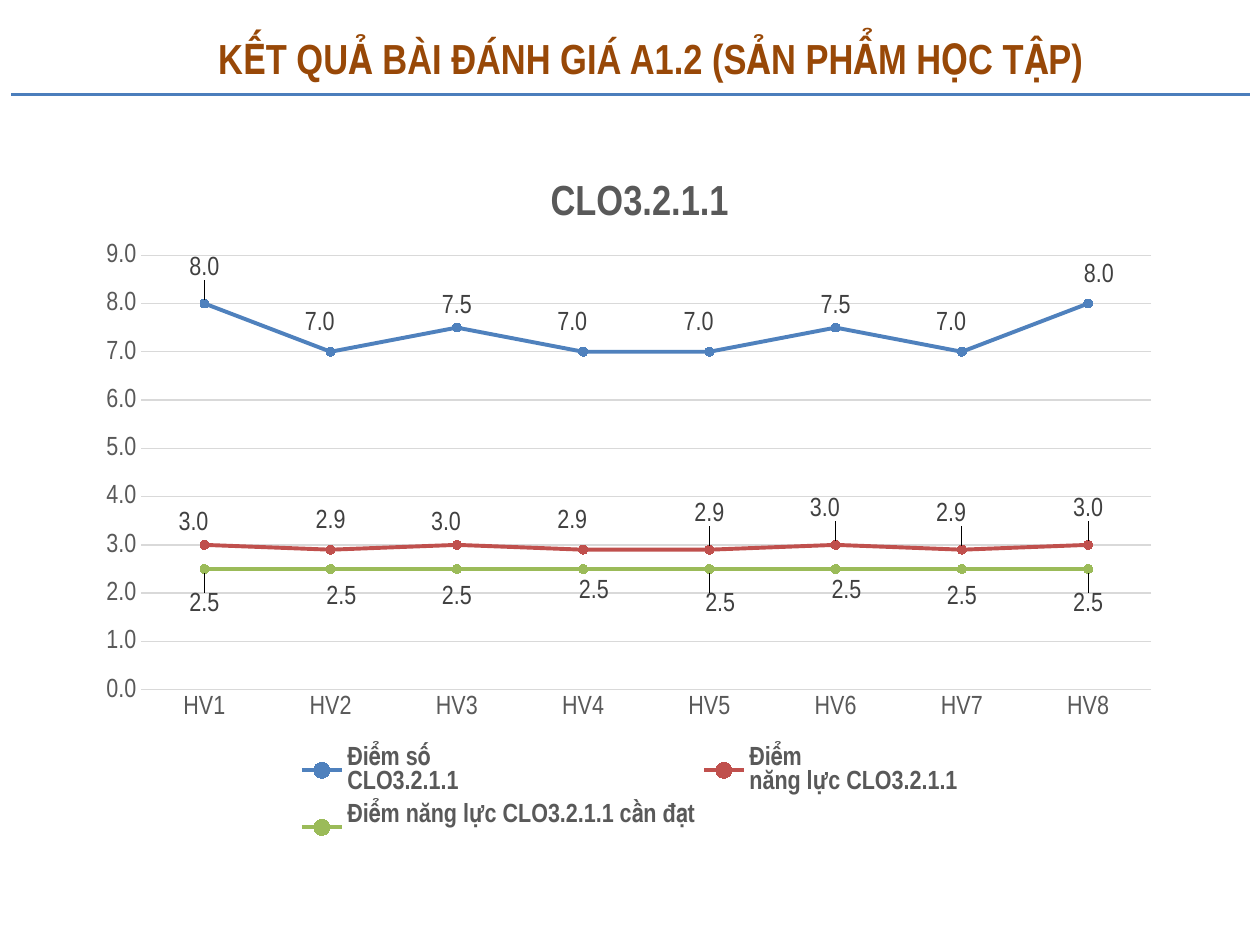
"""Builds a slide with a line chart of the A1.2 assessment results."""
from lxml import etree
from pptx import Presentation, util as u
from pptx.chart import data as chart_data
from pptx.dml import color
from pptx.enum import chart as ce, shapes, text
from pptx.oxml import ns

WIDTH, HEIGHT = 10, 7.5
FONT = "Arial Narrow"
COLORS = {"title": "984807", "rule": "4B7EBC", "text": "595959", "label": "404040", "grid": "D9D9D9"}
HEADING = "KẾT QUẢ BÀI ĐÁNH GIÁ A1.2 (SẢN PHẨM HỌC TẬP)"
CHART_TITLE = "CLO3.2.1.1"
CATEGORIES = [f"HV{number}" for number in range(1, 9)]
ABOVE, BELOW = ce.XL_LABEL_POSITION.ABOVE, ce.XL_LABEL_POSITION.BELOW
SERIES = [
    {"name": "Điểm số \nCLO3.2.1.1", "color": "4F81BD", "side": ABOVE,
     "values": [8, 7, 7.5, 7, 7, 7.5, 7, 8],
     "shifts": [(0, -.02), (-.01, -.01), (0, 0), (-.01, -.01),
                (-.01, -.01), (0, 0), (-.01, -.01), (.01, -.01)]},
    {"name": "Điểm \nnăng lực CLO3.2.1.1", "color": "C0504D", "side": ABOVE,
     "values": [3, 2.9, 3, 2.9, 2.9, 3, 2.9, 3],
     "shifts": [(-.01, 0), (0, -.01), (-.01, 0), (-.01, -.01),
                (0, -.02), (-.01, -.02), (-.01, -.02), (0, -.02)]},
    {"name": "Điểm năng lực CLO3.2.1.1 cần đạt", "color": "9BBB59", "side": BELOW,
     "values": [2.5] * 8,
     "shifts": [(0, .02), (.01, .01), (0, .01), (.01, 0),
                (.01, .02), (.01, 0), (0, .01), (0, .02)]},
]
PLOT = {"layoutTarget": "inner", "xMode": "edge", "yMode": "edge", "x": .05, "y": .16, "w": .93, "h": .63}
LEGEND = {"xMode": "edge", "yMode": "edge", "x": .19, "y": .86, "w": .62, "h": .14}
TITLE = {"xMode": "edge", "yMode": "edge", "x": .42, "y": .04}


def rgb(value):
    return color.RGBColor.from_string(value)


def style_font(font, size, shade, bold=False):
    for name, value in {"name": FONT, "size": u.Pt(size), "bold": bold}.items():
        setattr(font, name, value)
    font.color.rgb = rgb(COLORS[shade])


def style_line(line, shade, width):
    line.color.rgb = rgb(shade)
    line.width = u.Pt(width)


def set_layout(parent, index, values):
    for old in parent.findall(ns.qn("c:layout")):
        parent.remove(old)
    layout = etree.Element(ns.qn("c:layout"))
    manual = etree.SubElement(layout, ns.qn("c:manualLayout"))
    for name, value in values.items():
        etree.SubElement(manual, ns.qn(f"c:{name}")).set("val", str(value))
    parent.insert(index, layout)


def add_heading(slide):
    rule = slide.shapes.add_connector(
        shapes.MSO_CONNECTOR.STRAIGHT, *map(u.Inches, (.09, HEIGHT * .1, WIDTH - .08, HEIGHT * .1)))
    style_line(rule.line, COLORS["rule"], 2)
    etree.SubElement(rule.element.spPr, ns.qn("a:effectLst"))
    frame = slide.shapes.add_textbox(*map(u.Inches, (.33, .12, WIDTH - .33, .67))).text_frame
    frame.word_wrap = True
    frame.vertical_anchor = text.MSO_ANCHOR.MIDDLE
    paragraph = frame.paragraphs[0]
    paragraph.text = HEADING
    paragraph.alignment = text.PP_ALIGN.CENTER
    style_font(paragraph.runs[0].font, 24, "title", True)


def style_axes(chart):
    for axis in (chart.category_axis, chart.value_axis):
        axis.major_tick_mark = axis.minor_tick_mark = ce.XL_TICK_MARK.NONE
        style_font(axis.tick_labels.font, 15, "text")
    style_line(chart.category_axis.format.line, COLORS["grid"], .75)
    values = chart.value_axis
    for name, value in {"minimum_scale": 0, "maximum_scale": 9, "major_unit": 1}.items():
        setattr(values, name, value)
    values.format.line.fill.background()
    style_line(values.major_gridlines.format.line, COLORS["grid"], .75)
    values.tick_labels.number_format = "0.0"
    values.tick_labels.number_format_is_linked = False


def style_series(series, row):
    series.smooth = False
    style_line(series.format.line, row["color"], 2.25)
    marker = series.marker
    marker.style, marker.size = ce.XL_MARKER_STYLE.CIRCLE, 5
    marker.format.fill.solid()
    marker.format.fill.fore_color.rgb = rgb(row["color"])
    style_line(marker.format.line, row["color"], .75)
    labels = series.data_labels
    for name, value in {"show_value": True, "number_format": "0.0",
                        "number_format_is_linked": False, "position": row["side"]}.items():
        setattr(labels, name, value)
    style_font(labels.font, 15, "label")
    for index, (x, y) in enumerate(row["shifts"]):
        label = series.points[index].data_label
        label.position = row["side"]
        style_font(label.font, 15, "label")
    for element, (x, y) in zip(labels._element.findall(ns.qn("c:dLbl")), row["shifts"]):
        set_layout(element, 1, {"x": x, "y": y})


def add_chart(slide):
    data = chart_data.CategoryChartData(number_format="0.0")
    data.categories = CATEGORIES
    for row in SERIES:
        data.add_series(row["name"], row["values"])
    chart = slide.shapes.add_chart(
        ce.XL_CHART_TYPE.LINE_MARKERS, *map(u.Inches, (.69, 1.15, 8.62, 5.48)), data).chart
    chart.font.name, chart.font.size = FONT, u.Pt(10)
    chart.has_title = True
    title = chart.chart_title.text_frame
    title.text = CHART_TITLE
    style_font(title.paragraphs[0].runs[0].font, 24, "text", True)
    chart.chart_title.include_in_layout = False
    set_layout(chart.chart_title._element, 1, TITLE)
    chart.has_legend = True
    legend = chart.legend
    legend.position, legend.include_in_layout = ce.XL_LEGEND_POSITION.BOTTOM, False
    style_font(legend.font, 15, "text", True)
    set_layout(legend._element, 1, LEGEND)
    plot = chart.plots[0]
    plot.vary_by_categories = False
    set_layout(plot._element.getparent(), 0, PLOT)
    style_axes(chart)
    for series, row in zip(plot.series, SERIES):
        style_series(series, row)


def main():
    presentation = Presentation()
    presentation.slide_width, presentation.slide_height = u.Inches(WIDTH), u.Inches(HEIGHT)
    slide = presentation.slides.add_slide(presentation.slide_layouts[6])
    add_heading(slide)
    add_chart(slide)
    presentation.save("out.pptx")


if __name__ == "__main__":
    main()
